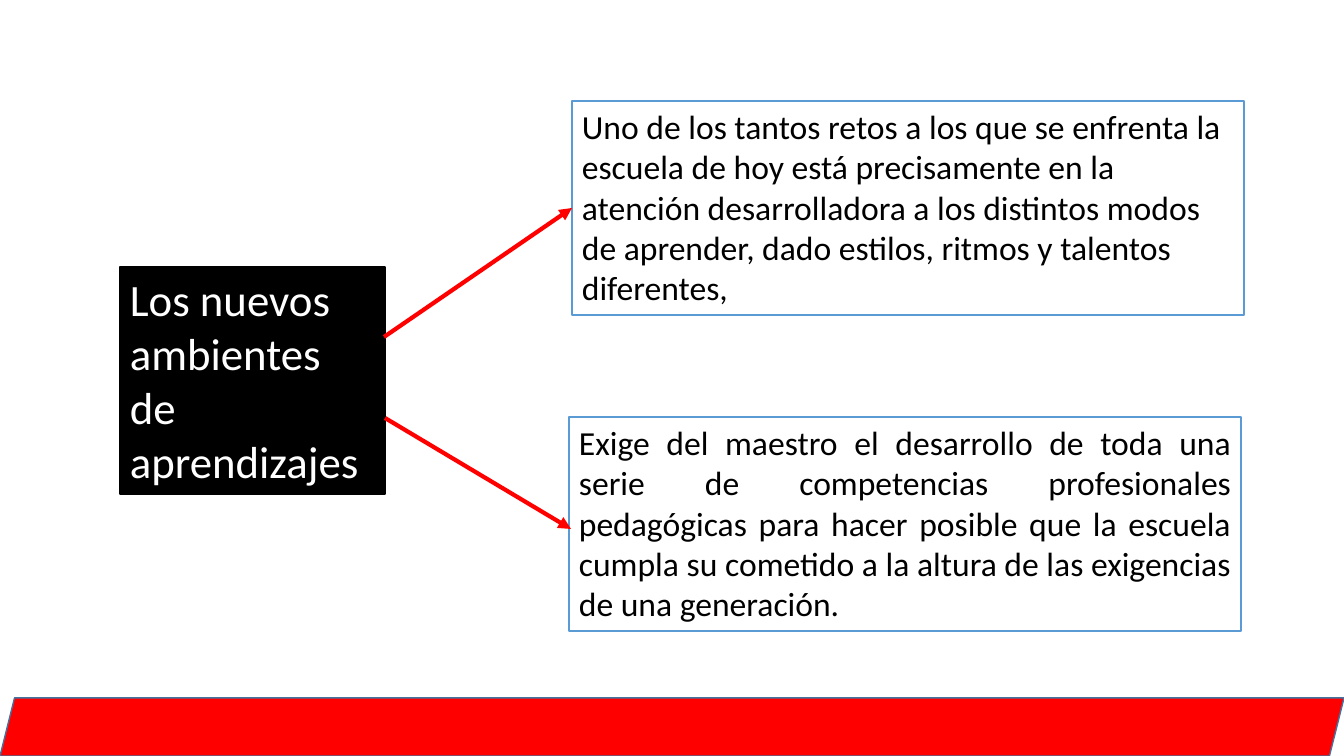
from dataclasses import dataclass

from lxml.etree import SubElement
from pptx import Presentation
from pptx.dml.color import RGBColor
from pptx.enum.shapes import MSO_CONNECTOR, MSO_SHAPE
from pptx.enum.text import MSO_ANCHOR, MSO_AUTO_SIZE, PP_ALIGN
from pptx.oxml.ns import qn
from pptx.shapes.autoshape import Shape
from pptx.slide import Slide
from pptx.util import Emu, Pt

PAGE_WIDTH, PAGE_HEIGHT = 1344, 756
EMU_PER_PX = 12192000 / PAGE_WIDTH
FONT = "Calibri"
COLOURS = {
    "black": "000000",
    "white": "FFFFFF",
    "red": "FF0000",
    "blue": "5B9BD5",
    "band_edge": "43739E",
}


@dataclass(frozen=True)
class Panel:
    left: int
    top: int
    width: int
    height: int
    fill: str
    line: str
    preset: MSO_SHAPE = MSO_SHAPE.RECTANGLE


@dataclass(frozen=True)
class Caption:
    panel: Panel
    text: str
    size: int
    colour: str
    align: PP_ALIGN = PP_ALIGN.LEFT


@dataclass(frozen=True)
class Arrow:
    start: tuple[int, int]
    end: tuple[int, int]


CAPTIONS = [
    Caption(
        Panel(120, 267, 265, 227, "black", "black"),
        "Los nuevos ambientes de aprendizajes",
        size=32,
        colour="white",
    ),
    Caption(
        Panel(572, 101, 672, 214, "white", "blue"),
        "Uno de los tantos retos a los que se enfrenta la escuela de hoy está "
        "precisamente en la atención desarrolladora a los distintos modos de "
        "aprender, dado estilos, ritmos y talentos diferentes,",
        size=24,
        colour="black",
    ),
    Caption(
        Panel(569, 417, 672, 214, "white", "blue"),
        "Exige del maestro el desarrollo de toda una serie de competencias "
        "profesionales pedagógicas para hacer posible que la escuela cumpla su "
        "cometido a la altura de las exigencias de una generación.",
        size=24,
        colour="black",
        align=PP_ALIGN.JUSTIFY,
    ),
]
ARROWS = [
    Arrow((384, 337), (572, 208)),
    Arrow((385, 418), (571, 529)),
]
BAND = Panel(0, 698, PAGE_WIDTH, 58, "red", "band_edge", MSO_SHAPE.PARALLELOGRAM)


def px(length: int) -> Emu:
    return Emu(round(length * EMU_PER_PX))


def colour(name: str) -> RGBColor:
    return RGBColor.from_string(COLOURS[name])


def add_panel(page: Slide, panel: Panel) -> Shape:
    box = page.shapes.add_shape(
        panel.preset, px(panel.left), px(panel.top), px(panel.width), px(panel.height)
    )
    box.shadow.inherit = False
    box.fill.solid()
    box.fill.fore_color.rgb = colour(panel.fill)
    box.line.color.rgb = colour(panel.line)
    box.line.width = Pt(1)
    return box


def write_text(
    box: Shape, text: str, *, size: int, colour_name: str, align: PP_ALIGN
) -> None:
    frame = box.text_frame
    frame.word_wrap = True
    frame.auto_size = MSO_AUTO_SIZE.SHAPE_TO_FIT_TEXT
    frame.vertical_anchor = MSO_ANCHOR.TOP
    para = frame.paragraphs[0]
    para.alignment = align
    span = para.add_run()
    span.text = text
    span.font.name = FONT
    span.font.size = Pt(size)
    span.font.color.rgb = colour(colour_name)


def add_arrow(page: Slide, arrow: Arrow) -> None:
    connector = page.shapes.add_connector(
        MSO_CONNECTOR.STRAIGHT, *map(px, arrow.start + arrow.end)
    )
    connector.line.color.rgb = colour("red")
    connector.line.width = Pt(3)
    SubElement(connector.line._get_or_add_ln(), qn("a:tailEnd"), type="triangle")
    SubElement(connector._element.spPr, qn("a:effectLst"))


def main() -> None:
    deck = Presentation()
    deck.slide_width = px(PAGE_WIDTH)
    deck.slide_height = px(PAGE_HEIGHT)
    page = deck.slides.add_slide(deck.slide_layouts[6])
    for caption in CAPTIONS:
        write_text(
            add_panel(page, caption.panel),
            caption.text,
            size=caption.size,
            colour_name=caption.colour,
            align=caption.align,
        )
    for arrow in ARROWS:
        add_arrow(page, arrow)
    add_panel(page, BAND)
    deck.save("out.pptx")


if __name__ == "__main__":
    main()
